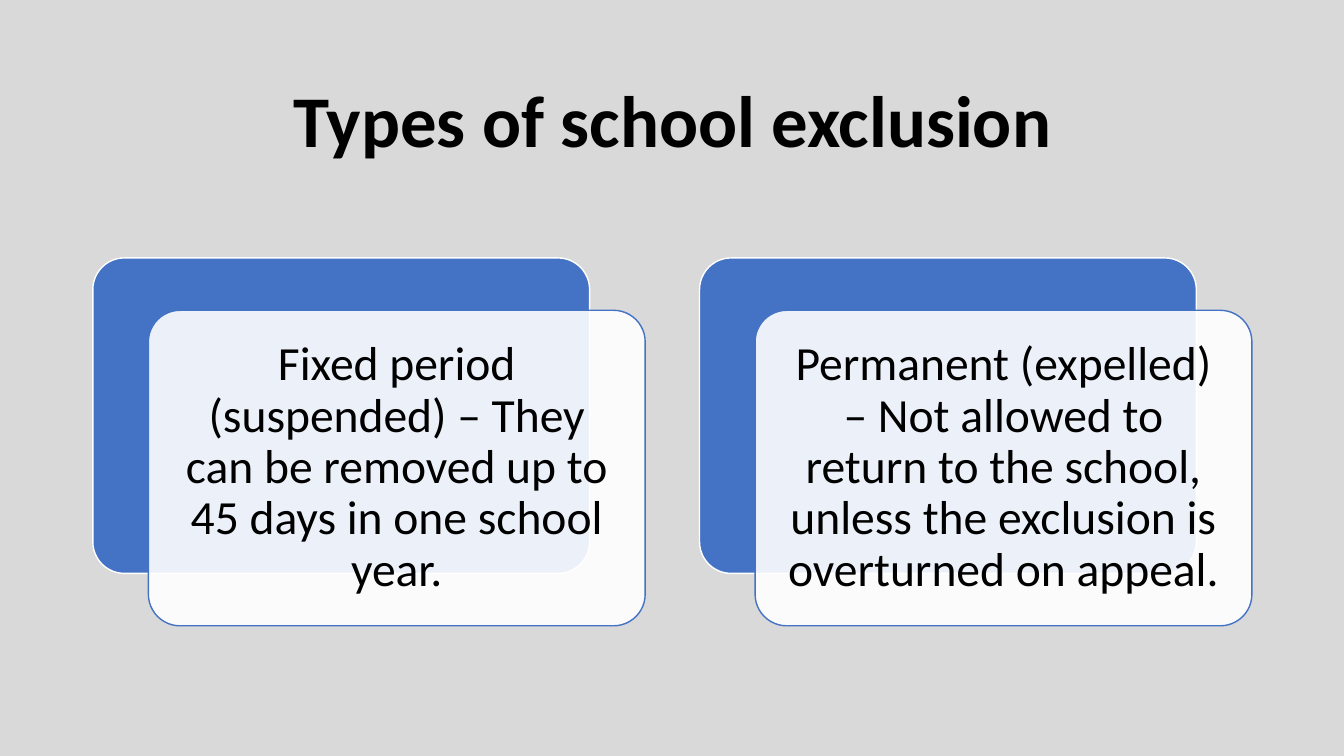
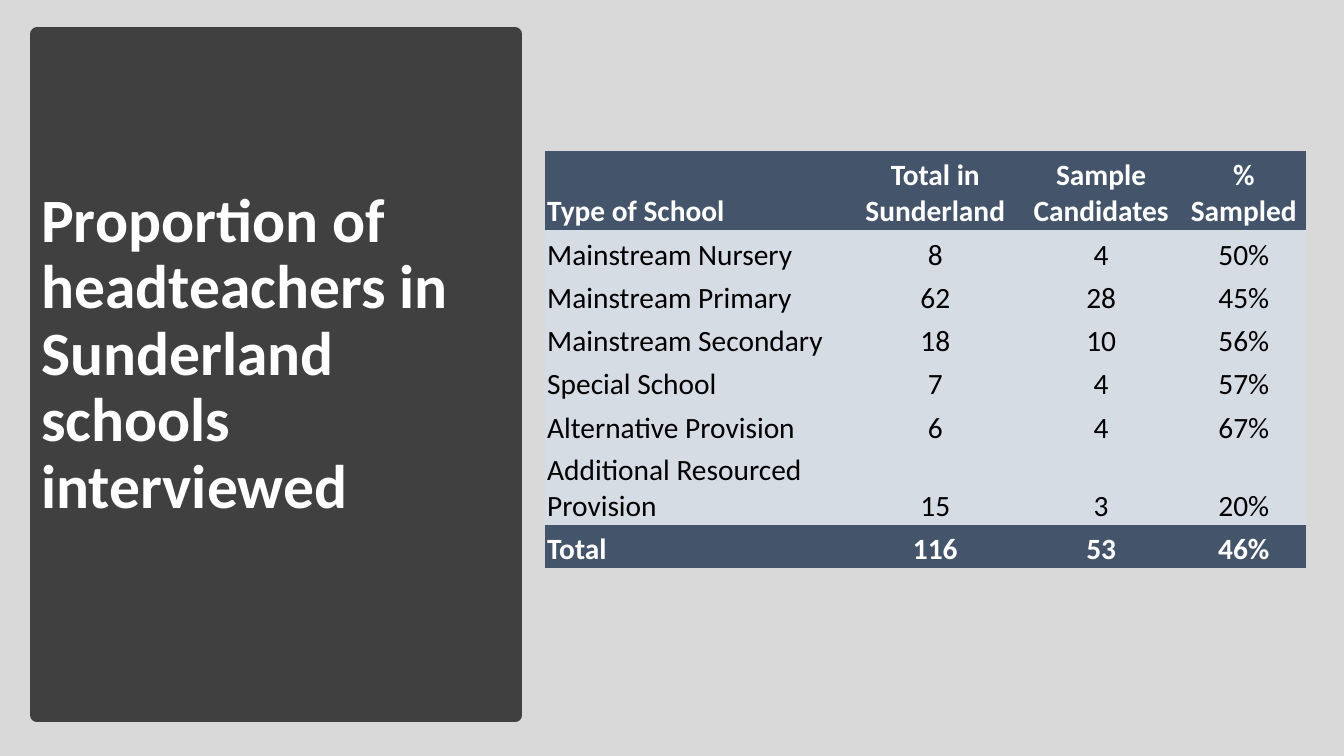
"""Build two slides on school exclusion: the types, and the headteachers interviewed."""
from dataclasses import dataclass

from lxml import etree
from pptx import Presentation
from pptx.dml.color import RGBColor
from pptx.enum import shapes, text
from pptx.oxml.ns import qn
from pptx.util import Cm, Pt


@dataclass(frozen=True)
class Theme:
    font: str = "Calibri"
    backdrop: str = "D9D9D9"
    ink: str = "000000"
    paper: str = "FFFFFF"
    accent: str = "4472C4"
    panel: str = "404040"
    table_band: str = "44546A"
    table_body: str = "D6DCE4"
    title_size: int = 52
    panel_title_size: int = 44
    card_size: int = 34
    table_size: int = 21
    line_spacing: float = 0.9


THEME = Theme()
PLAIN_TABLE = "{2D5ABB26-0587-4C30-8999-92F81FD0307C}"
CENTER, LEFT = text.PP_ALIGN.CENTER, text.PP_ALIGN.LEFT

TYPES_TITLE = "Types of school exclusion"
TYPES = [
    "Fixed period (suspended) – They can be removed up to 45 days in one school year.",
    "Permanent (expelled) – Not allowed to return to the school, "
    "unless the exclusion is overturned on appeal.",
]

SAMPLE_TITLE = "Proportion of headteachers in Sunderland schools interviewed"
SAMPLE = [
    ("Type of School", "Total in Sunderland", "Sample Candidates", "% Sampled"),
    ("Mainstream Nursery", "8", "4", "50%"),
    ("Mainstream Primary", "62", "28", "45%"),
    ("Mainstream Secondary", "18", "10", "56%"),
    ("Special School", "7", "4", "57%"),
    ("Alternative Provision", "6", "4", "67%"),
    ("Additional Resourced Provision", "15", "3", "20%"),
    ("Total", "116", "53", "46%"),
]
COLUMN_WIDTHS = [7.67, 4.32, 4.04, 3.15]
ROW_HEIGHT, TALL_ROW_HEIGHT = 1.09, 1.98
TALL_ROWS = (0, 6)

MARGIN, CONTENT_WIDTH = 2.34, 29.21
CARD_TOP, CARD_WIDTH, CARD_HEIGHT = 6.5, 12.52, 7.95
CARD_SHIFT_X, CARD_SHIFT_Y = 1.4, 1.32
CARD_INSET = 0.36


def rgb(color):
    return RGBColor.from_string(color)


def write(frame, words, size, color, align=LEFT, bold=False):
    frame.word_wrap = True
    paragraph = frame.paragraphs[0]
    paragraph.text = words
    paragraph.alignment = align
    font = paragraph.font
    font.name, font.size, font.bold = THEME.font, Pt(size), bold
    font.color.rgb = rgb(color)
    return paragraph


def add_title(slide, words, box, size, color, align):
    frame = slide.shapes.add_textbox(*map(Cm, box)).text_frame
    frame.vertical_anchor = text.MSO_ANCHOR.MIDDLE
    title = write(frame, words, size, color, align, bold=True)
    title.line_spacing = THEME.line_spacing


def add_block(slide, kind, box, fill, line, line_width):
    block = slide.shapes.add_shape(kind, *map(Cm, box))
    block.shadow.inherit = False
    block.fill.solid()
    block.fill.fore_color.rgb = rgb(fill)
    block.line.color.rgb = rgb(line)
    block.line.width = Pt(line_width)
    return block


def add_card(slide, left, top, fill, line):
    box = (left, top, CARD_WIDTH, CARD_HEIGHT)
    card = add_block(slide, shapes.MSO_SHAPE.ROUNDED_RECTANGLE, box, fill, line, 1)
    card.adjustments[0] = 0.1
    return card


def set_opacity(shape, percent):
    color = shape.fill._xPr.find(qn("a:solidFill"))[0]
    etree.SubElement(color, qn("a:alpha")).set("val", str(percent * 1000))


def add_exclusion_type(slide, words, left):
    add_card(slide, left, CARD_TOP, THEME.accent, THEME.paper)
    front = add_card(slide, left + CARD_SHIFT_X, CARD_TOP + CARD_SHIFT_Y,
                     THEME.paper, THEME.accent)
    set_opacity(front, 90)
    frame = front.text_frame
    frame.margin_left = frame.margin_right = Cm(CARD_INSET)
    frame.margin_top = frame.margin_bottom = Cm(CARD_INSET)
    frame.vertical_anchor = text.MSO_ANCHOR.MIDDLE
    definition = write(frame, words, THEME.card_size, THEME.ink, CENTER)
    definition.line_spacing = THEME.line_spacing


def add_sample_table(slide, left, top):
    heights = [TALL_ROW_HEIGHT if row in TALL_ROWS else ROW_HEIGHT
               for row in range(len(SAMPLE))]
    box = (left, top, sum(COLUMN_WIDTHS), sum(heights))
    table = slide.shapes.add_table(len(SAMPLE), len(COLUMN_WIDTHS), *map(Cm, box)).table
    table._tbl.tblPr.find(qn("a:tableStyleId")).text = PLAIN_TABLE
    table.horz_banding = False
    for column, width in zip(table.columns, COLUMN_WIDTHS):
        column.width = Cm(width)
    for row, height in zip(table.rows, heights):
        row.height = Cm(height)
    for r, record in enumerate(SAMPLE):
        band = r in (0, len(SAMPLE) - 1)
        for c, value in enumerate(record):
            cell = table.cell(r, c)
            cell.fill.solid()
            cell.fill.fore_color.rgb = rgb(THEME.table_band if band else THEME.table_body)
            cell.margin_left = cell.margin_right = cell.margin_top = Cm(0.05)
            cell.margin_bottom = 0
            cell.vertical_anchor = text.MSO_ANCHOR.BOTTOM
            write(cell.text_frame, value, THEME.table_size,
                  THEME.paper if band else THEME.ink, CENTER if c else LEFT, band)


def build_types(slide):
    add_title(slide, TYPES_TITLE, (MARGIN, 1.55, CONTENT_WIDTH, 3.15),
              THEME.title_size, THEME.ink, CENTER)
    pitch = (CONTENT_WIDTH - CARD_SHIFT_X - CARD_WIDTH) / (len(TYPES) - 1)
    for i, words in enumerate(TYPES):
        add_exclusion_type(slide, words, MARGIN + i * pitch)


def build_sample(slide):
    add_block(slide, shapes.MSO_SHAPE.RECTANGLE, (0.94, 0.86, 12.04, 17.17),
              THEME.panel, THEME.panel, 10)
    add_title(slide, SAMPLE_TITLE, (0.79, 2.06, 12.47, 13.79),
              THEME.panel_title_size, THEME.paper, LEFT)
    add_sample_table(slide, 13.74, 3.81)


def main():
    deck = Presentation()
    deck.slide_width, deck.slide_height = Cm(33.87), Cm(19.05)
    backdrop = deck.slide_master.background.fill
    backdrop.solid()
    backdrop.fore_color.rgb = rgb(THEME.backdrop)
    for build in (build_types, build_sample):
        build(deck.slides.add_slide(deck.slide_layouts[6]))
    deck.save("out.pptx")


if __name__ == "__main__":
    main()
